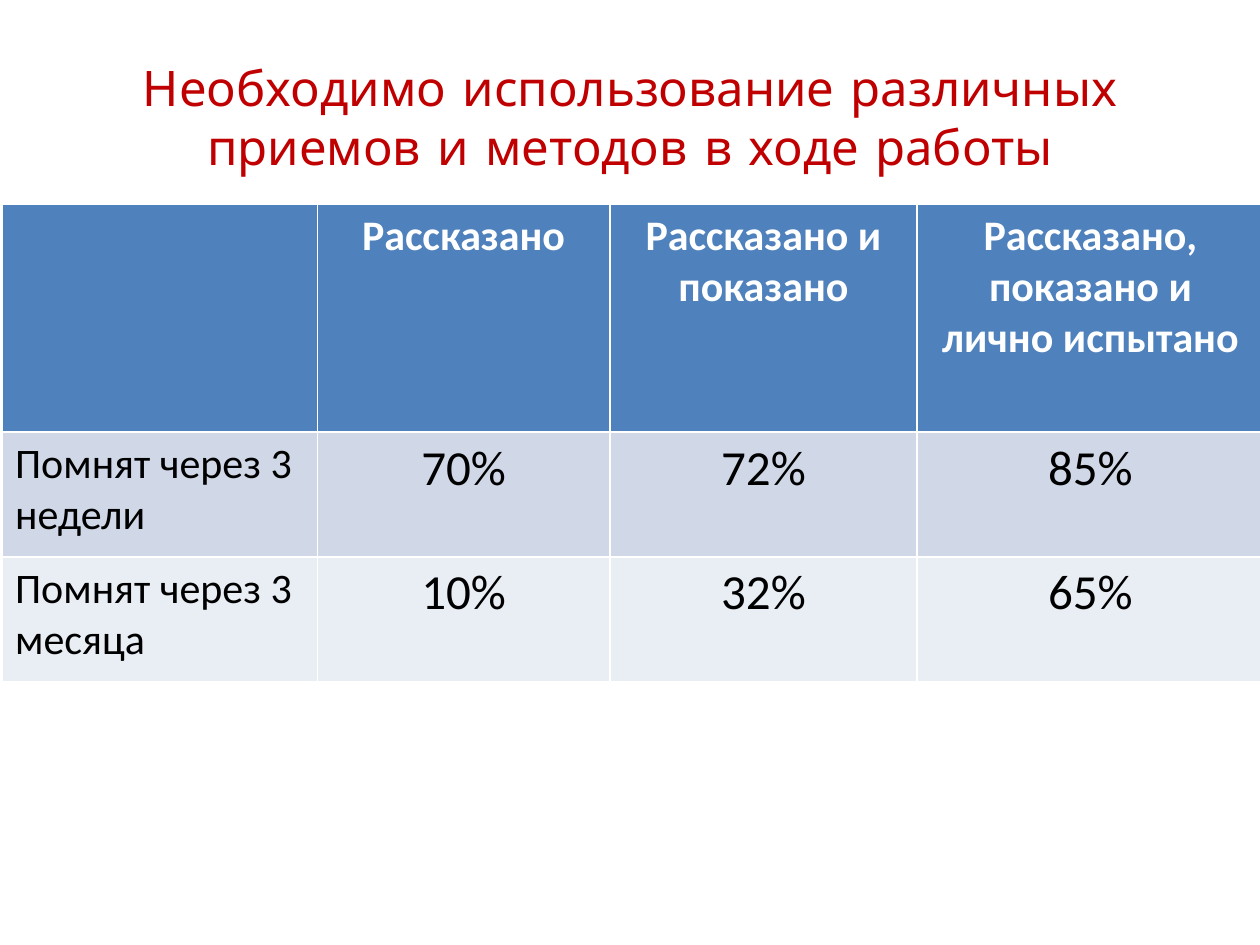
from dataclasses import dataclass

import pptx
import pptx.dml.color
import pptx.enum.text
import pptx.util

Inches = pptx.util.Inches
ALIGN = pptx.enum.text.PP_ALIGN


@dataclass(frozen=True)
class Theme:
    title_font: str = "Comic Neue"
    body_font: str = "Calibri"
    title: str = "C00000"
    header: str = "4F81BD"
    header_text: str = "FFFFFF"
    text: str = "000000"
    bands: tuple = ("D0D8E8", "E9EDF4")
    label_size: int = 24
    large_size: int = 28


THEME = Theme()

TITLE = "Необходимо использование различных приемов и методов в ходе работы"
ROWS = [
    ["", "Рассказано", "Рассказано и показано", "Рассказано, показано и лично испытано"],
    ["Помнят через 3 недели", "70%", "72%", "85%"],
    ["Помнят через 3 месяца", "10%", "32%", "65%"],
]
COL_WIDTHS = [2.5, 2.32, 2.44, 2.75]
ROW_HEIGHTS = [1.81, 0.99, 0.99]


def rgb(value):
    return pptx.dml.color.RGBColor.from_string(value)


def write(tf, text, size, color, font=THEME.body_font, bold=False, align=ALIGN.CENTER):
    p = tf.paragraphs[0]
    p.alignment = align
    r = p.add_run()
    r.text = text
    r.font.name = font
    r.font.size = pptx.util.Pt(size)
    r.font.bold = bold
    r.font.color.rgb = rgb(color)


def add_title(s, left, top, width, height):
    sp = s.shapes.title
    sp.left, sp.top = Inches(left), Inches(top)
    sp.width, sp.height = Inches(width), Inches(height)
    tf = sp.text_frame
    tf.word_wrap = True
    tf.vertical_anchor = pptx.enum.text.MSO_ANCHOR.MIDDLE
    write(tf, TITLE, THEME.large_size, THEME.title, font=THEME.title_font)


def add_recall_table(s, left, top, width, height):
    table = s.shapes.add_table(len(ROWS), len(COL_WIDTHS), Inches(left), Inches(top),
                               Inches(width), Inches(height)).table
    # Share the box out in proportion to the column and row sizes
    for column, share in zip(table.columns, COL_WIDTHS):
        column.width = Inches(width * share / sum(COL_WIDTHS))
    for row, share in zip(table.rows, ROW_HEIGHTS):
        row.height = Inches(height * share / sum(ROW_HEIGHTS))

    # The table style draws the white rules; fills and text are set here
    for i, texts in enumerate(ROWS):
        is_header = i == 0
        fill = THEME.header if is_header else THEME.bands[(i - 1) % 2]
        color = THEME.header_text if is_header else THEME.text
        for j, text in enumerate(texts):
            cell = table.cell(i, j)
            cell.fill.solid()
            cell.fill.fore_color.rgb = rgb(fill)
            is_label = is_header or j == 0
            if text:
                write(cell.text_frame, text,
                      THEME.label_size if is_label else THEME.large_size, color,
                      bold=is_header, align=ALIGN.LEFT if j == 0 else ALIGN.CENTER)


def main():
    prs = pptx.Presentation()
    prs.slide_width, prs.slide_height = Inches(10), Inches(7.5)
    s = prs.slides.add_slide(prs.slide_layouts[5])  # title only
    add_title(s, 0.5, 0.3, 9, 1.25)
    add_recall_table(s, 0.02, 1.62, sum(COL_WIDTHS), sum(ROW_HEIGHTS))
    prs.save("out.pptx")


if __name__ == "__main__":
    main()
